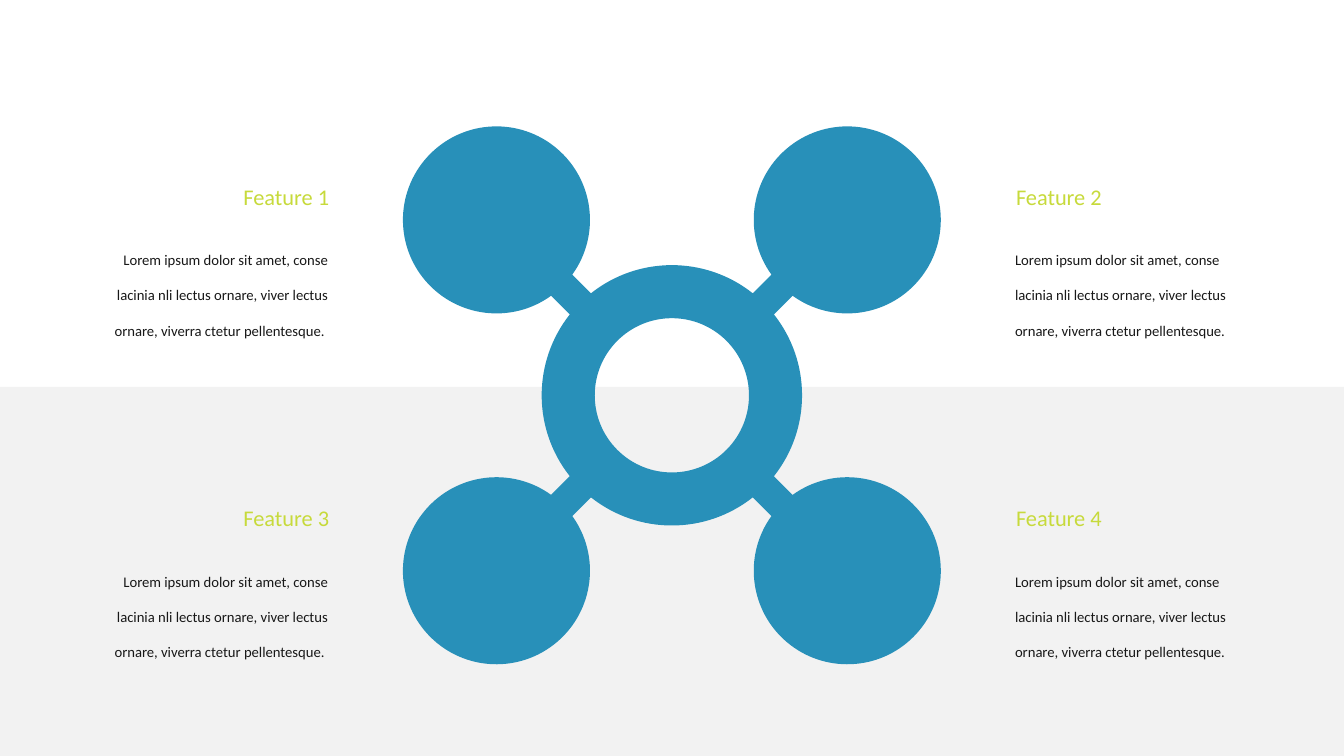
"""Build a four-feature hub slide."""
from math import asin, cos, pi, sin, tan

from pptx import Presentation
from pptx.dml.color import RGBColor
from pptx.enum.shapes import MSO_SHAPE as SHAPE
from pptx.enum.text import MSO_AUTO_SIZE as AUTO, PP_ALIGN as ALIGN
from pptx.oxml.ns import qn
from pptx.util import Pt

BLUE, LIME, INK, GREY = "2890B9", "C7DA3B", "181818", "F2F2F2"
LOREM = ("Lorem ipsum dolor sit amet, conse lacinia nli lectus ornare, "
         "viver lectus ornare, viverra ctetur pellentesque.")


def rgb(value):
    return RGBColor.from_string(value)


def polar(cx, cy, radius, angle):
    return cx + radius * cos(angle), cy + radius * sin(angle)


def arc(cx, cy, radius, start, end, pieces):
    step = (end - start) / pieces
    k = 4 / 3 * tan(step / 4) * radius
    points = []
    for i in range(pieces):
        a, b = start + i * step, start + (i + 1) * step
        ax, ay = polar(cx, cy, radius, a)
        bx, by = polar(cx, cy, radius, b)
        points += [(ax - k * sin(a), ay + k * cos(a)),
                   (bx + k * sin(b), by - k * cos(b)), (bx, by)]
    return points


class Deck:
    font = "Calibri"

    def __init__(self, width, height):
        self.prs = Presentation()
        self.prs.slide_width, self.prs.slide_height = Pt(width), Pt(height)
        self.s = self.prs.slides.add_slide(self.prs.slide_layouts[6])

    def paint(self, sp, color):
        sp.shadow.inherit = False
        sp.fill.solid()
        sp.fill.fore_color.rgb = rgb(color)
        sp.line.fill.background()

    def band(self, x, y, w, h, color):
        sp = self.s.shapes.add_shape(SHAPE.RECTANGLE, Pt(x), Pt(y), Pt(w), Pt(h))
        self.paint(sp, color)

    def curves(self, contours):
        contours = [[(Pt(x), Pt(y)) for x, y in c] for c in contours]
        fb = self.s.shapes.build_freeform(*contours[0][0])
        fb.add_line_segments(contours[0][1:], close=True)
        for contour in contours[1:]:
            fb.move_to(*contour[0])
            fb.add_line_segments(contour[1:], close=True)
        sp = fb.convert_to_shape()
        lines = list(sp._element.iter(qn("a:lnTo")))
        for curve, *rest in zip(lines[::3], lines[1::3], lines[2::3]):
            for line in rest:
                curve.append(line[0])
                line.getparent().remove(line)
            curve.tag = qn("a:cubicBezTo")
        return sp

    def hub(self, cx, cy, radius, hole, node, reach, half_arm, color):
        at_hub, at_node = asin(half_arm / radius), asin(half_arm / node)
        outline = [polar(cx + reach, cy, node, pi + at_node)]
        for i in range(4):
            a, b = i * pi / 2, (i + 1) * pi / 2
            outline += arc(*polar(cx, cy, reach, a), node,
                           a + pi + at_node, a + 3 * pi - at_node, 4)
            outline += [polar(cx, cy, radius, a + at_hub)] * 3
            outline += arc(cx, cy, radius, a + at_hub, b - at_hub, 1)
            outline += [polar(*polar(cx, cy, reach, b), node, b + pi + at_node)] * 3
        inner = [(cx + hole, cy)] + arc(cx, cy, hole, 2 * pi, 0, 4)
        sp = self.curves([outline, inner])
        sp.rotation = 45
        self.paint(sp, color)

    def text(self, x, y, w, h, text, size, color, align, spacing=1.0):
        tf = self.s.shapes.add_textbox(Pt(x), Pt(y), Pt(w), Pt(h)).text_frame
        tf.word_wrap, tf.auto_size = True, AUTO.SHAPE_TO_FIT_TEXT
        tf.text = text
        p = tf.paragraphs[0]
        p.alignment, p.line_spacing = align, spacing
        font = p.runs[0].font
        font.name, font.size, font.color.rgb = self.font, Pt(size), rgb(color)


def main():
    deck = Deck(960, 540)
    deck.band(0, 276.4, 960, 263.6, GREY)
    deck.hub(479.9, 282.4, radius=93, hole=55.1, node=66.8, reach=177.2,
             half_arm=10.7, color=BLUE)
    columns = [(70.2, 69.4, ALIGN.RIGHT, LOREM + " "),
               (718.7, 718, ALIGN.LEFT, LOREM)]
    for i in range(4):
        row, col = divmod(i, 2)
        heading_x, body_x, align, body = columns[col]
        y = 127 + row * 229.6
        deck.text(body_x, y + 36.2, 172, 80.6, body, 10.5, INK, align, 2.0)
        deck.text(heading_x, y, 172, 26.6, f"Feature {i + 1}", 16, LIME, align)
    deck.prs.save("out.pptx")


if __name__ == "__main__":
    main()
